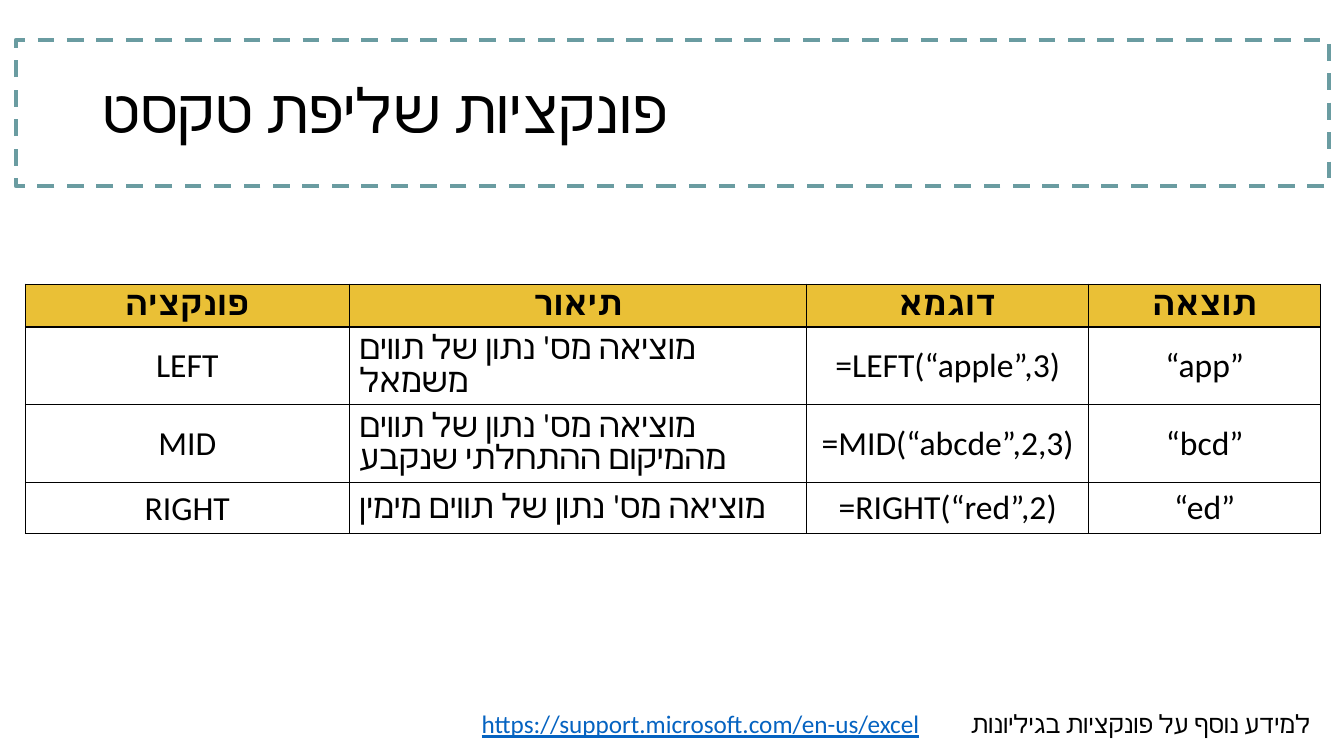
from dataclasses import dataclass

from lxml.etree import SubElement
from pptx import Presentation
from pptx.dml.color import RGBColor
from pptx.enum.dml import MSO_LINE
from pptx.enum.shapes import MSO_SHAPE
from pptx.enum.text import MSO_ANCHOR, PP_ALIGN
from pptx.oxml.ns import qn
from pptx.util import Cm, Pt


@dataclass(frozen=True)
class Theme:
    font: str = "Calibri"
    text: str = "000000"
    frame: str = "6A9CA1"
    header: str = "EAC036"
    link: str = "0563C1"
    title_size: int = 44
    table_size: int = 24
    footer_size: int = 18


theme = Theme()


def add_run(paragraph, text, size, color=theme.text, bold=False):
    run = paragraph.add_run()
    run.text = text
    run.font.name = theme.font
    run.font.size = Pt(size)
    run.font.bold = bold
    run.font.color.rgb = RGBColor.from_string(color)
    SubElement(run.font._element, qn("a:cs"), typeface=theme.font)
    return run


def add_borders(cell):
    properties = cell._tc.get_or_add_tcPr()
    for position, side in enumerate(("lnL", "lnR", "lnT", "lnB")):
        line = SubElement(properties, qn(f"a:{side}"), w=str(Pt(1)))
        fill = SubElement(line, qn("a:solidFill"))
        SubElement(fill, qn("a:srgbClr"), val=theme.text)
        properties.insert(position, line)


presentation = Presentation()
presentation.slide_width = Cm(33.87)
presentation.slide_height = Cm(19.05)
slide = presentation.slides.add_slide(presentation.slide_layouts[5])

# Title in a dashed frame
title = slide.shapes.title
title.left, title.top, title.width, title.height = Cm(2.34), Cm(1.02), Cm(29.21), Cm(3.68)
title.text_frame.vertical_anchor = MSO_ANCHOR.MIDDLE
paragraph = title.text_frame.paragraphs[0]
paragraph.alignment = PP_ALIGN.LEFT
paragraph.line_spacing = 0.9
add_run(paragraph, "פונקציות שליפת טקסט", theme.title_size)

frame = slide.shapes.add_shape(MSO_SHAPE.RECTANGLE, Cm(0.4), Cm(1.01), Cm(33.1), Cm(3.68))
frame.shadow.inherit = False
frame.fill.background()
frame.line.color.rgb = RGBColor.from_string(theme.frame)
frame.line.width = Pt(3)
frame.line.dash_style = MSO_LINE.DASH
title._element.addprevious(frame._element)

# Function table
rows = [
    ("פונקציה", "תיאור", "דוגמא", "תוצאה"),
    ("LEFT", "מוציאה מס' נתון של תווים משמאל", "=LEFT(“apple”,3)", "“app”"),
    ("MID", "מוציאה מס' נתון של תווים מהמיקום ההתחלתי שנקבע", "=MID(“abcde”,2,3)", "“bcd”"),
    ("RIGHT", "מוציאה מס' נתון של תווים מימין", "=RIGHT(“red”,2)", "“ed”"),
]
column_widths = [8.16, 11.53, 7.11, 5.84]
row_heights = [1.08, 1.96, 1.96, 1.28]
table = slide.shapes.add_table(
    len(rows), len(column_widths), Cm(0.64), Cm(7.16), Cm(sum(column_widths)), Cm(sum(row_heights))
).table
table.first_row = table.horz_banding = False
for column, width in zip(table.columns, column_widths):
    column.width = Cm(width)

for row_index, (row, height) in enumerate(zip(rows, row_heights)):
    table.rows[row_index].height = Cm(height)
    is_header = row_index == 0
    for column_index, text in enumerate(row):
        cell = table.cell(row_index, column_index)
        if is_header:
            cell.fill.solid()
            cell.fill.fore_color.rgb = RGBColor.from_string(theme.header)
        else:
            cell.fill.background()
            cell.vertical_anchor = MSO_ANCHOR.MIDDLE
            if column_index == 0:
                cell.margin_left = cell.margin_right = cell.margin_top = Cm(0.03)
                cell.margin_bottom = 0
        add_borders(cell)
        paragraph = cell.text_frame.paragraphs[0]
        is_description = column_index == 1 and not is_header
        paragraph.alignment = PP_ALIGN.LEFT if is_description else PP_ALIGN.CENTER
        if is_header or is_description:
            paragraph.line_spacing = 0.8
        add_run(paragraph, text, theme.table_size, bold=is_header)

# Further reading
note = slide.shapes.add_textbox(Cm(10.67), Cm(17.73), Cm(22.61), Cm(1.02))
note.text_frame.word_wrap = True
paragraph = note.text_frame.paragraphs[0]
paragraph.alignment = PP_ALIGN.RIGHT
paragraph._p.get_or_add_pPr().set("rtl", "1")
add_run(paragraph, "למידע נוסף על פונקציות בגיליונות", theme.footer_size)

address = slide.shapes.add_textbox(Cm(11.89), Cm(17.73), Cm(16.99), Cm(1.02))
address.text_frame.word_wrap = True
run = add_run(
    address.text_frame.paragraphs[0],
    "https://support.microsoft.com/en-us/excel",
    theme.footer_size,
    theme.link,
)
run.font.underline = True

presentation.save("out.pptx")
